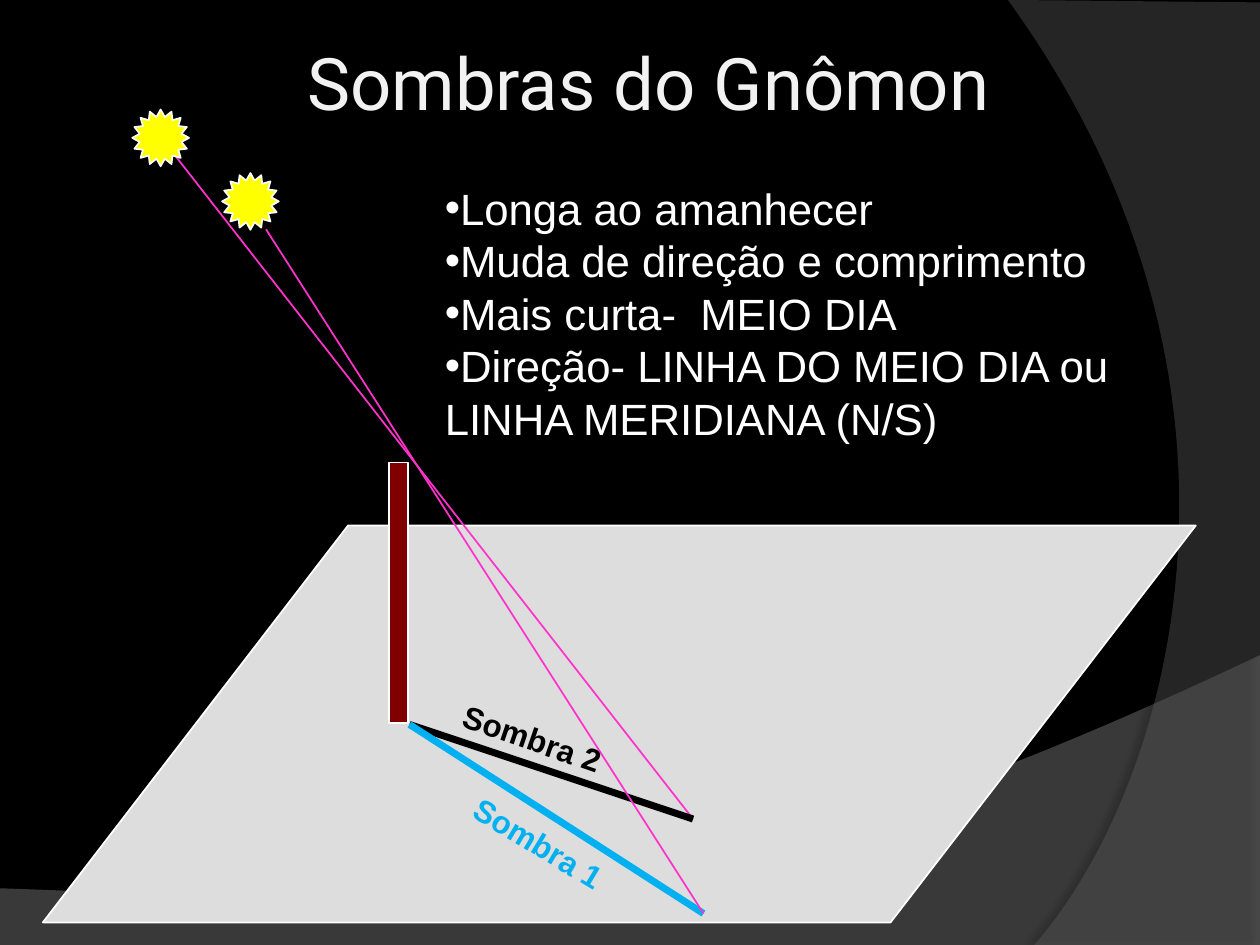
from lxml.etree import SubElement
from pptx import Presentation
from pptx.dml.color import RGBColor
from pptx.enum.shapes import MSO_CONNECTOR, MSO_SHAPE
from pptx.enum.text import MSO_ANCHOR, MSO_AUTO_SIZE, PP_ALIGN
from pptx.oxml.ns import qn
from pptx.util import Pt

BLACK = RGBColor(0x00, 0x00, 0x00)
WHITE = RGBColor(0xFF, 0xFF, 0xFF)
TITLE = RGBColor(0xF2, 0xF2, 0xF2)
GROUND = RGBColor(0xDD, 0xDD, 0xDD)
POLE = RGBColor(0x80, 0x00, 0x00)
SUN = RGBColor(0xFF, 0xFF, 0x00)
RAY = RGBColor(0xFF, 0x33, 0xCC)
BLUE = RGBColor(0x00, 0xB0, 0xF0)
WAVE = RGBColor(0x7F, 0x7F, 0x7F)
FAN = RGBColor(0x5E, 0x5E, 0x5E)


def curve(a, b, c, d, steps=60):
    """Points along the cubic Bezier curve from a to d."""
    ts = [i / steps for i in range(steps + 1)]
    return [tuple((1 - t) ** 3 * p + 3 * (1 - t) ** 2 * t * q
                  + 3 * (1 - t) * t ** 2 * u + t ** 3 * v
                  for p, q, u, v in zip(a, b, c, d)) for t in ts]


def write(p, text, size=18, font="Arial", color=WHITE, bold=False,
          align=PP_ALIGN.LEFT):
    p.alignment = align
    r = p.add_run()
    r.text = text
    r.font.size, r.font.name, r.font.bold = Pt(size), font, bold
    r.font.color.rgb = color


def bullet(p, char="•"):
    pPr = p._p.get_or_add_pPr()
    pPr.set("marL", "0")
    pPr.set("indent", "0")
    SubElement(pPr, qn("a:buChar")).set("char", char)


class Drawing:
    def __init__(self, slide, line_color=WHITE, line_width=1):
        self.s = slide
        self.line_color = line_color
        self.line_width = line_width

    def place(self, sp, x, y, w, h):
        sp.left, sp.top, sp.width, sp.height = Pt(x), Pt(y), Pt(w), Pt(h)
        return sp

    def title(self, text, *box):
        sp = self.place(self.s.shapes.title, *box)
        tf = sp.text_frame
        tf.vertical_anchor = MSO_ANCHOR.MIDDLE
        write(tf.paragraphs[0], text, size=41.4, font="Roboto", color=TITLE,
              align=PP_ALIGN.CENTER)

    def bullets(self, items, *box):
        tf = self.place(self.s.placeholders[1], *box).text_frame
        tf.vertical_anchor = MSO_ANCHOR.TOP
        tf.auto_size = MSO_AUTO_SIZE.NONE
        for i, item in enumerate(items):
            p = tf.add_paragraph() if i else tf.paragraphs[0]
            p.space_before = Pt(0)
            p.line_spacing = Pt(30)
            write(p, item, size=25)
            bullet(p)

    def shape(self, kind, x, y, w, h, fill, adj=None):
        sp = self.s.shapes.add_shape(kind, Pt(x), Pt(y), Pt(w), Pt(h))
        sp.shadow.inherit = False
        sp.fill.solid()
        sp.fill.fore_color.rgb = fill
        sp.line.color.rgb = self.line_color
        sp.line.width = Pt(self.line_width)
        if adj is not None:
            sp.adjustments[0] = adj

    def line(self, start, end, color, width=1):
        c = self.s.shapes.add_connector(
            MSO_CONNECTOR.STRAIGHT, *[Pt(v) for v in start + end])
        c.line.color.rgb = color
        c.line.width = Pt(width)
        SubElement(c._element.spPr, qn("a:effectLst"))

    def label(self, text, x, y, angle, color):
        sp = self.s.shapes.add_textbox(Pt(x), Pt(y), Pt(97.2), Pt(28.8))
        sp.rotation = angle
        sp.text_frame.word_wrap = False
        write(sp.text_frame.paragraphs[0], text, color=color, bold=True,
              align=PP_ALIGN.CENTER)

    def backdrop(self, points, color, opacity, shade, direction):
        """Translucent outline with a soft shadow, behind everything else."""
        pts = [(Pt(x), Pt(y)) for x, y in points]
        fb = self.s.shapes.build_freeform(*pts[0], scale=1.0)
        fb.add_line_segments(pts[1:], close=True)
        sp = fb.convert_to_shape()
        sp.line.fill.background()
        sp.fill.solid()
        sp.fill.fore_color.rgb = color
        clr = sp.fill._xPr.find(qn("a:solidFill"))[0]
        SubElement(clr, qn("a:alpha")).set("val", str(opacity * 1000))
        sp.shadow.inherit = False
        effects = sp._element.spPr.find(qn("a:effectLst"))
        shadow = SubElement(effects, qn("a:outerShdw"), blurRad=str(Pt(4)),
                            dist=str(Pt(4)), dir=str(direction * 60000))
        clr = SubElement(shadow, qn("a:srgbClr"), val=str(BLACK))
        SubElement(clr, qn("a:alpha")).set("val", str(shade * 1000))
        self.s.shapes._spTree.insert(2, sp._element)


def main():
    prs = Presentation()
    prs.slide_width, prs.slide_height = Pt(720), Pt(540)
    s = prs.slides.add_slide(prs.slide_layouts[1])
    s.background.fill.solid()
    s.background.fill.fore_color.rgb = BLACK
    d = Drawing(s)

    fan = curve((591, 540), (673, 446), (733, 216), (576, 0))
    d.backdrop([(720, 1.4), (720, 540)] + fan, FAN, 40, 45, 180)
    wave = curve((720, 374.4), (402.5, 525), (281.5, 517.7), (0, 507.6))
    d.backdrop([(0, 540), (720, 540)] + wave, WAVE, 45, 35, 270)

    d.title("Sombras do Gnômon", 99.4, 15.1, 542.2, 62.6)
    d.shape(MSO_SHAPE.PARALLELOGRAM, 24.5, 300.3, 658.8, 226.8, GROUND, 0.769)
    d.shape(MSO_SHAPE.RECTANGLE, 222.4, 264.4, 10.9, 149, POLE)

    foot, tip_1, tip_2 = (234, 414), (402, 522), (396, 468)
    d.line((93.6, 80.6), tip_2, RAY)
    d.line(foot, tip_2, BLACK, 4)
    d.line(foot, tip_1, BLUE, 4)
    d.line((152, 131), tip_1, RAY)
    d.label("Sombra 1", 259.2, 467.3, 31, BLUE)
    d.label("Sombra 2", 255.6, 407.5, 19, BLACK)

    for x, y in ((75.6, 62.6), (126.9, 98.9)):
        d.shape(MSO_SHAPE.STAR_16_POINT, x, y, 32.4, 32.4, SUN, 0.375)

    d.bullets(["Longa ao amanhecer",
               "Muda de direção e comprimento",
               "Mais curta-  MEIO DIA",
               "Direção- LINHA DO MEIO DIA ou LINHA MERIDIANA (N/S)"],
              247, 100.1, 425.5, 158.4)
    prs.save("out.pptx")


if __name__ == "__main__":
    main()
